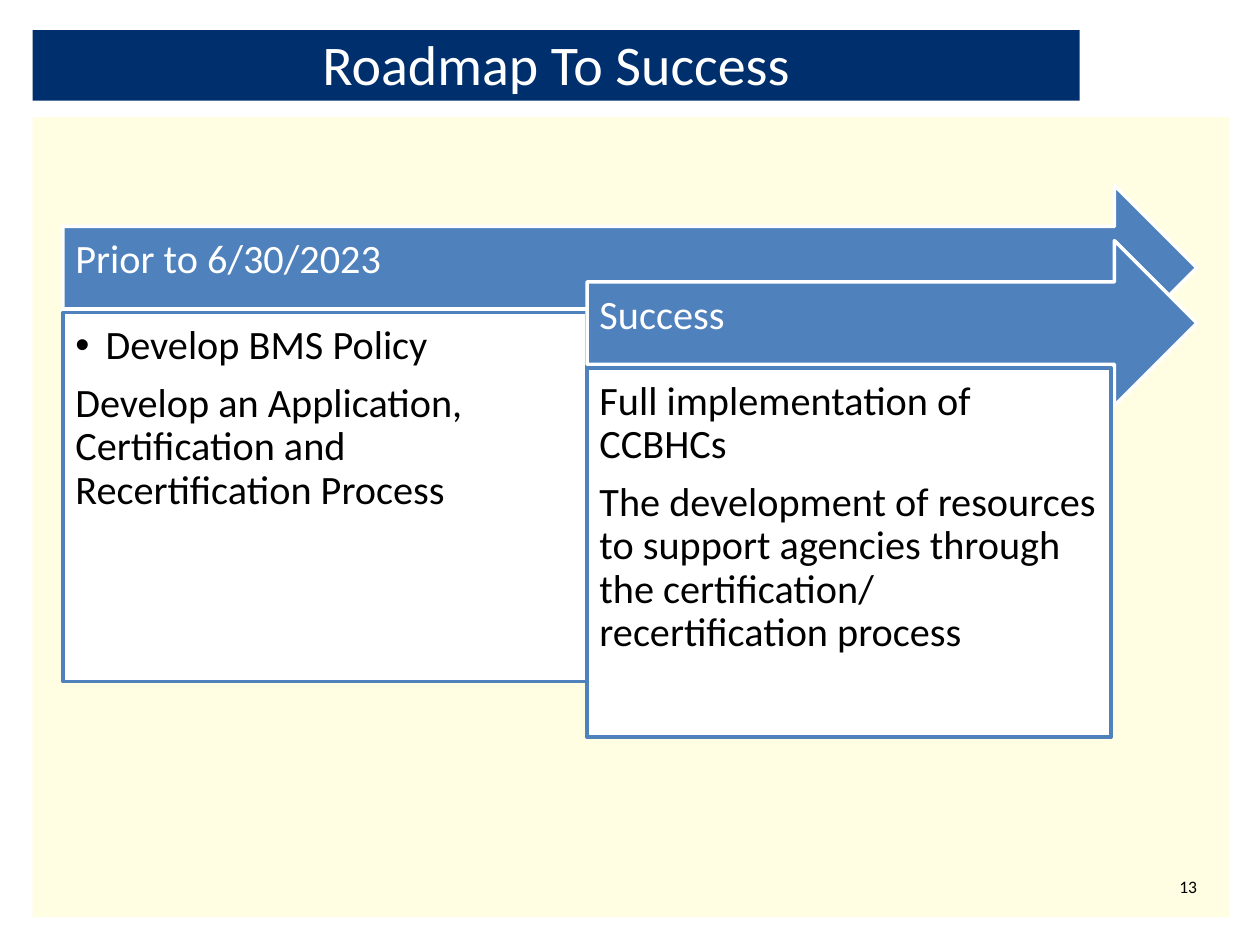
from lxml import etree
from pptx import Presentation
from pptx.dml.color import RGBColor
from pptx.enum.shapes import MSO_SHAPE
from pptx.enum.text import MSO_ANCHOR, PP_ALIGN
from pptx.oxml.ns import qn
from pptx.util import Inches, Pt

COLORS = {"navy": "002F6D", "cream": "FFFDE2", "blue": "4F81BD",
          "white": "FFFFFF", "black": "000000"}
FONT = "Calibri"
TITLE = "Roadmap To Success"
PAGE_NUMBER = "13"
STEPS = [
    {"heading": "Prior to 6/30/2023",
     "details": [("Develop BMS Policy", True),
                 ("Develop an Application, Certification and "
                  "Recertification Process", False)]},
    {"heading": "Success",
     "details": [("Full implementation of CCBHCs", False),
                 ("The development of resources to support agencies through "
                  "the certification/ recertification process", False)]},
]

LEFT, RIGHT = 0.5, 9.5
ARROW_TOP, ARROW_HEIGHT = 1.47, 1.31
PANEL_WIDTH, PANEL_HEIGHT = 4.16, 2.93
PANEL_DROP, STEP_DROP = 1.01, 0.44
BULLET_INDENT = 0.24


def color(name):
    return RGBColor.from_string(COLORS[name])


def add_block(slide, preset, box, fill, outline=None):
    block = slide.shapes.add_shape(preset, *map(Inches, box))
    block.shadow.inherit = False
    block.fill.solid()
    block.fill.fore_color.rgb = color(fill)
    if outline:
        block.line.color.rgb = color(outline)
        block.line.width = Pt(2)
    else:
        block.line.fill.background()
    return block


def add_bullet(paragraph):
    properties = paragraph._p.get_or_add_pPr()
    properties.set("marL", str(Inches(BULLET_INDENT)))
    properties.set("indent", str(-Inches(BULLET_INDENT)))
    etree.SubElement(properties, qn("a:buFont")).set("typeface", "Arial")
    etree.SubElement(properties, qn("a:buChar")).set("char", "•")


def write(shape, lines, size, ink, insets, anchor=MSO_ANCHOR.TOP,
          align=PP_ALIGN.LEFT, spaced=False):
    frame = shape.text_frame
    frame.word_wrap = True
    frame.vertical_anchor = anchor
    (frame.margin_left, frame.margin_top,
     frame.margin_right, frame.margin_bottom) = map(Inches, insets)
    for index, (text, bulleted) in enumerate(lines):
        paragraph = frame.add_paragraph() if index else frame.paragraphs[0]
        if bulleted:
            add_bullet(paragraph)
        paragraph.alignment = align
        if spaced:
            paragraph.line_spacing = 0.9
            paragraph.space_after = Pt(8)
        run = paragraph.add_run()
        run.text = text
        run.font.name = FONT
        run.font.size = Pt(size)
        run.font.color.rgb = color(ink)


def add_step(slide, index, step):
    left = LEFT + index * PANEL_WIDTH
    top = ARROW_TOP + index * STEP_DROP
    arrow = add_block(slide, MSO_SHAPE.RIGHT_ARROW,
                      (left, top, RIGHT - left, ARROW_HEIGHT), "blue", "white")
    write(arrow, [(step["heading"], False)], 23, "white",
          (0.1, 0.1, 0.28, 0.21), MSO_ANCHOR.MIDDLE, spaced=True)
    panel = add_block(slide, MSO_SHAPE.RECTANGLE,
                      (left, top + PANEL_DROP, PANEL_WIDTH, PANEL_HEIGHT),
                      "white", "blue")
    write(panel, step["details"], 23, "black", (0.1,) * 4, spaced=True)


def main():
    deck = Presentation()
    deck.slide_width, deck.slide_height = Inches(10), Inches(7.5)
    slide = deck.slides.add_slide(deck.slide_layouts[6])

    add_block(slide, MSO_SHAPE.RECTANGLE, (0.26, 0.93, 9.5, 6.35), "cream")
    banner = add_block(slide, MSO_SHAPE.RECTANGLE, (0.26, 0.24, 8.31, 0.56), "navy")
    write(banner, [(TITLE, False)], 32, "white", (0, 0, 0, 0.04),
          MSO_ANCHOR.MIDDLE, PP_ALIGN.CENTER)

    for index, step in enumerate(STEPS):
        add_step(slide, index, step)

    page = slide.shapes.add_textbox(*map(Inches, (9.12, 6.95, 0.38, 0.19)))
    write(page, [(PAGE_NUMBER, False)], 10, "black", (0,) * 4, align=PP_ALIGN.RIGHT)
    deck.save("out.pptx")


if __name__ == "__main__":
    main()
